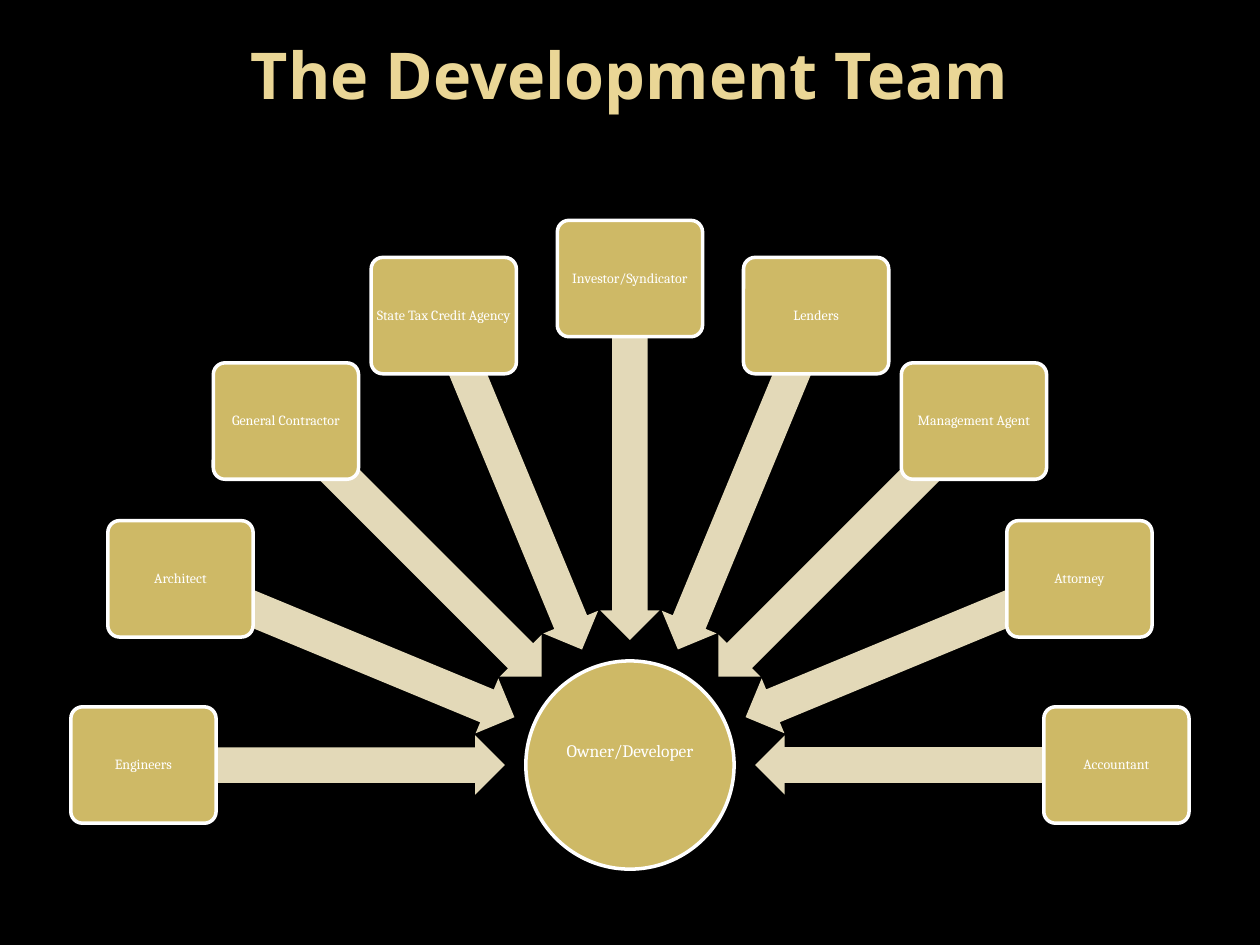
import math

import pptx
import pptx.dml.color
import pptx.enum.shapes
import pptx.enum.text
import pptx.util

Pt = pptx.util.Pt
SHAPE = pptx.enum.shapes.MSO_SHAPE
ANCHOR = pptx.enum.text.MSO_ANCHOR
COLORS = {
    "back": "000000",
    "title": "EAD696",
    "node": "CEB966",
    "arrow": "E3D9B8",
    "white": "FFFFFF",
}
TEAM = [
    "Engineers", "Architect", "General Contractor", "State Tax Credit Agency",
    "Investor/Syndicator", "Lenders", "Management Agent", "Attorney", "Accountant",
]


def color(name):
    return pptx.dml.color.RGBColor.from_string(COLORS[name])


def write(shape, text, size, font="Cambria", fill="white", bold=False,
          anchor=ANCHOR.MIDDLE, space=0.9, base=0):
    """Set centred text; base is the bottom inset."""
    frame = shape.text_frame
    frame.word_wrap = True
    frame.vertical_anchor = anchor
    frame.margin_left = frame.margin_right = frame.margin_top = 0
    frame.margin_bottom = Pt(base)
    para = frame.paragraphs[0]
    para.alignment = pptx.enum.text.PP_ALIGN.CENTER
    para.line_spacing = space
    run = para.add_run()
    run.text = text
    run.font.name = font
    run.font.size = Pt(size)
    run.font.bold = bold
    run.font.color.rgb = color(fill)


def draw(slide, kind, x, y, w, h, fill, line=None):
    """Add a filled shape centred on x, y."""
    shape = slide.shapes.add_shape(kind, Pt(x - w / 2), Pt(y - h / 2), Pt(w), Pt(h))
    shape.shadow.inherit = False
    shape.fill.solid()
    shape.fill.fore_color.rgb = color(fill)
    if line:
        shape.line.color.rgb = color(line)
        shape.line.width = Pt(2)
    else:
        shape.line.fill.background()
    return shape


def title(slide, x, y, w, h):
    box = slide.shapes.add_textbox(Pt(x), Pt(y), Pt(w), Pt(h))
    write(box, "The Development Team", 36.9, font="Noto Sans", fill="title",
          bold=True, anchor=ANCHOR.TOP, space=1)


def wheel(slide, x, y, w, h):
    """Fan the team out in a half circle above the hub."""
    hub, wide, high = 119, 83, 66.5
    mid, low = x + w / 2, y + h - hub / 2
    reach = (w - wide) / 2
    center = draw(slide, SHAPE.OVAL, mid, low, hub, hub, "node", "white")
    write(center, "Owner/Developer", 10, base=15)

    step = 180 / (len(TEAM) - 1)
    for i, name in enumerate(TEAM):
        turn = 180 + i * step
        dx, dy = math.cos(math.radians(turn)), math.sin(math.radians(turn))
        arrow = draw(slide, SHAPE.LEFT_ARROW, mid + 174.8 * dx, low + 174.8 * dy,
                     206.6, 33.9, "arrow")
        arrow.adjustments[0] = 0.6
        arrow.adjustments[1] = 0.5
        arrow.rotation = turn % 360
        card = draw(slide, SHAPE.ROUNDED_RECTANGLE, mid + reach * dx,
                    low + reach * dy, wide, high, "node", "white")
        card.adjustments[0] = 0.1
        write(card, name, 8)


def main():
    deck = pptx.Presentation()
    deck.slide_width, deck.slide_height = Pt(720), Pt(540)
    slide = deck.slides.add_slide(deck.slide_layouts[6])
    slide.background.fill.solid()
    slide.background.fill.fore_color.rgb = color("back")
    title(slide, 36, 20, 648, 90)
    wheel(slide, 40.5, 126, 639, 370.7)
    deck.save("out.pptx")


if __name__ == "__main__":
    main()
